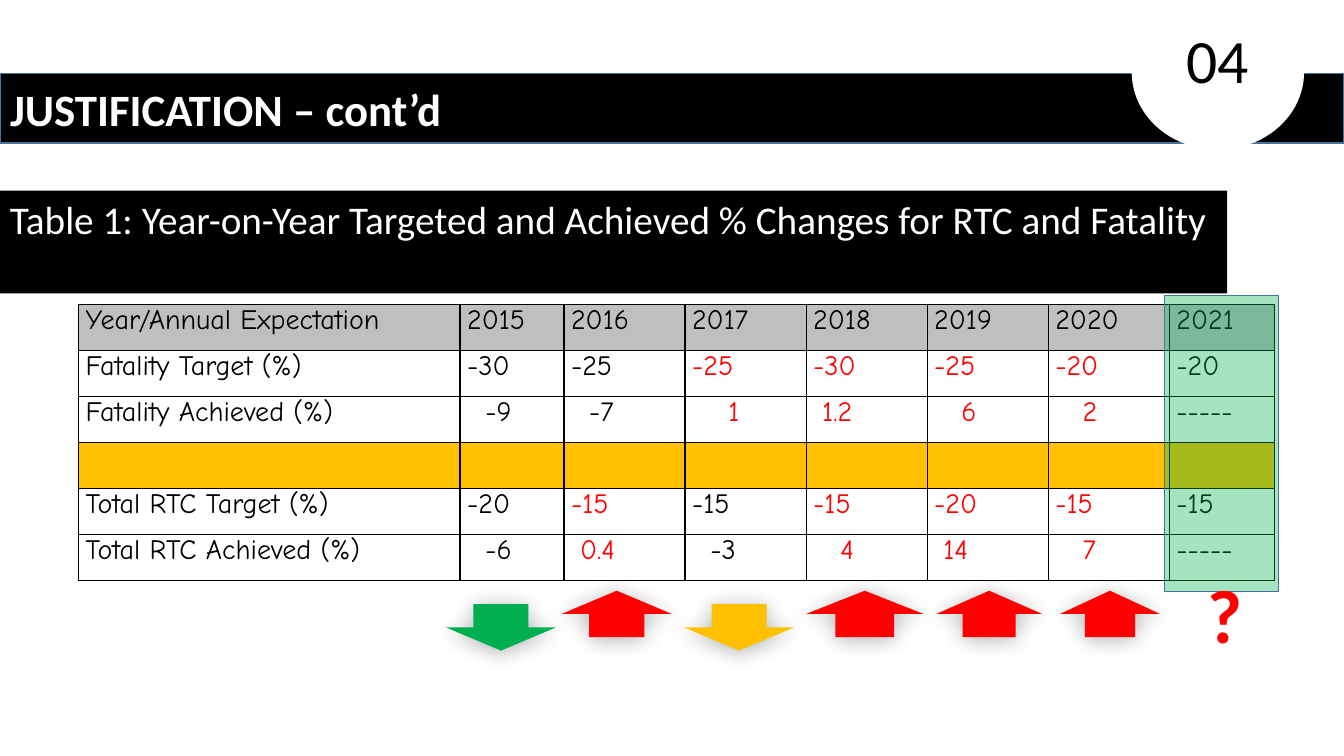
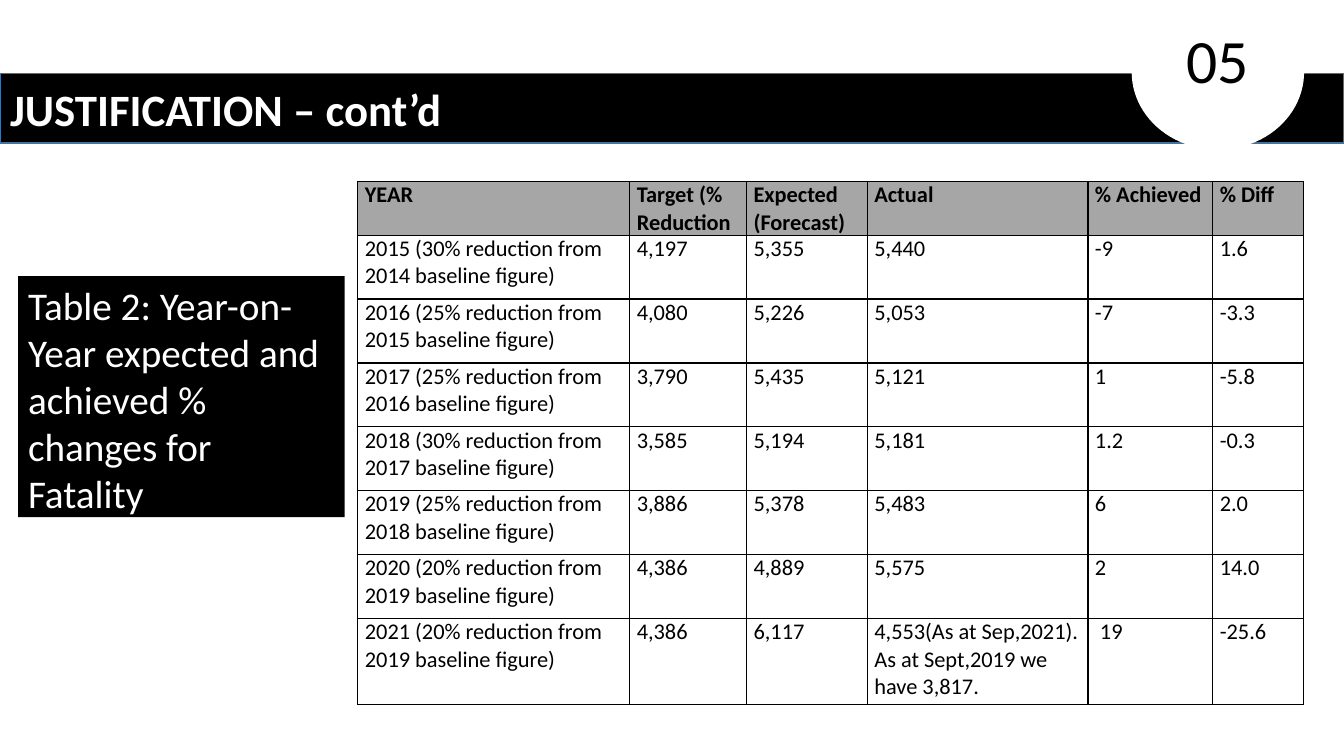
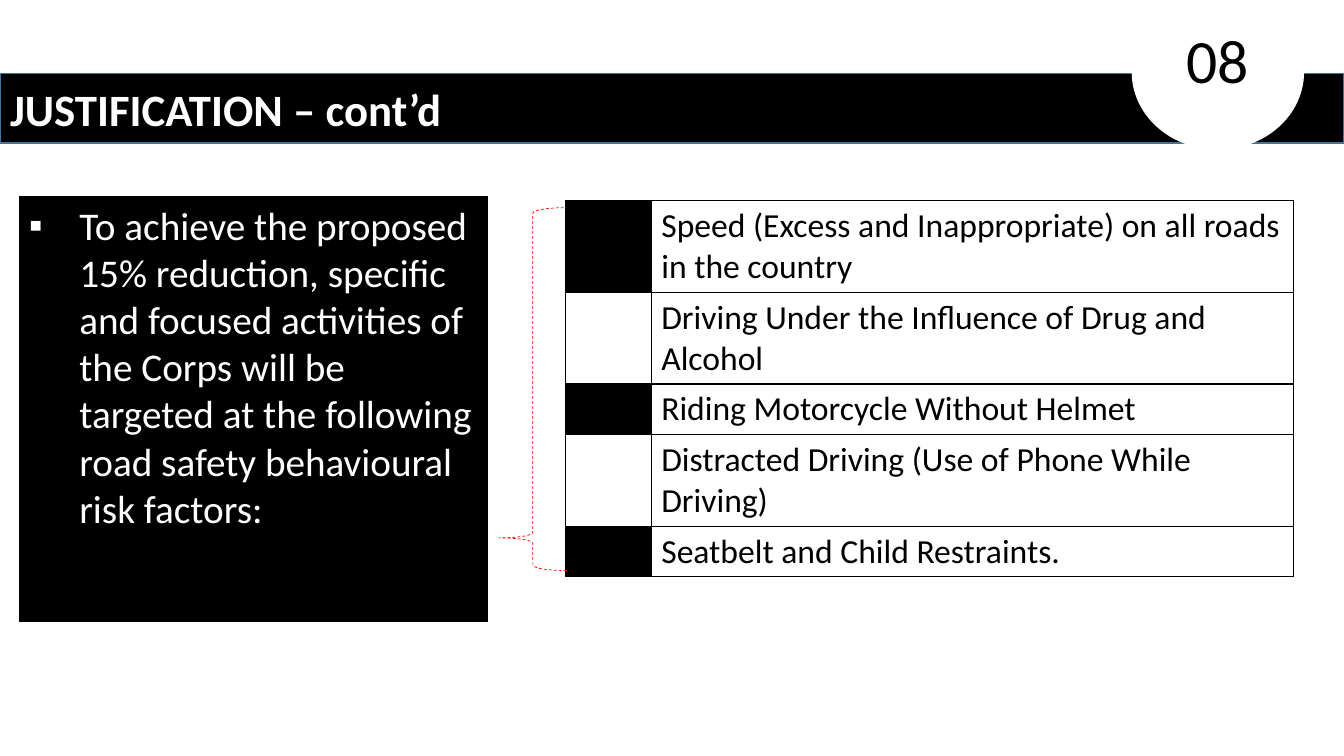
from dataclasses import dataclass

from pptx import Presentation
from pptx import util as u
from pptx.dml.color import RGBColor
from pptx.enum import dml, shapes, text
from pptx.oxml import parse_xml
from pptx.oxml.ns import nsdecls, qn

COLOURS = {"black": "000000", "white": "FFFFFF", "red": "FF0000",
           "green": "00B050", "amber": "FFC000", "edge": "43739E",
           "head1": "BFBFBF", "head2": "A6A6A6"}
SHAPE = shapes.MSO_SHAPE
WIDTH, HEIGHT = u.Inches(13.33), u.Inches(7.5)


@dataclass
class Box:
    """A region in slide units; inner boxes are given as percentages of it."""
    x: float
    y: float
    w: float
    h: float

    def inner(self, x, y, w, h):
        return Box(self.x + self.w * x / 100, self.y + self.h * y / 100,
                   self.w * w / 100, self.h * h / 100)

    def emu(self):
        return [u.Emu(int(v)) for v in (self.x, self.y, self.w, self.h)]


SLIDE = Box(0, 0, WIDTH, HEIGHT)


def rgb(name):
    return RGBColor.from_string(COLOURS[name])


def xml(tag, attrs="", inner=""):
    return parse_xml(f"<a:{tag} {nsdecls('a')} {attrs}>{inner}</a:{tag}>")


def paint(sp, fill=None, line=None, width=1):
    if fill:
        sp.fill.solid()
        sp.fill.fore_color.rgb = rgb(fill)
    else:
        sp.fill.background()
    if line:
        sp.line.color.rgb = rgb(line)
        sp.line.width = u.Pt(width)
    else:
        sp.line.fill.background()


def write(tf, words, size, colour="black", bold=False, face="Calibri",
          align=text.PP_ALIGN.LEFT):
    """Fill a text frame, one paragraph per line of words."""
    tf.word_wrap = True
    for i, line in enumerate(words.split("\n")):
        p = tf.paragraphs[0] if i == 0 else tf.add_paragraph()
        p.alignment = align
        r = p.add_run()
        r.text = line
        for key, value in {"size": u.Pt(size), "bold": bold, "name": face}.items():
            setattr(r.font, key, value)
        r.font.color.rgb = rgb(colour)


def add_shape(parent, kind, box, fill=None, line=None, width=1):
    sp = parent.add_shape(kind, *box.emu())
    sp.shadow.inherit = False
    paint(sp, fill, line, width)
    return sp


def add_turned(parent, kind, box, angle, fill):
    """Add a shape whose quarter-turned outline fills the box."""
    turned = Box(box.x + (box.w - box.h) / 2, box.y + (box.h - box.w) / 2, box.h, box.w)
    sp = add_shape(parent, kind, turned, fill)
    sp.rotation = angle
    return sp


def add_caption(s, box, words, line=None):
    sp = add_shape(s.shapes, SHAPE.RECTANGLE, box, "black", line, 0.75)
    sp.text_frame.vertical_anchor = text.MSO_ANCHOR.TOP
    write(sp.text_frame, words, 28, "white")
    return sp


def add_badge(s, box, number):
    group = s.shapes.add_group_shape().shapes
    add_turned(group, SHAPE.FLOWCHART_DELAY, box, 90, "white")
    label = group.add_textbox(*box.inner(26, 14.6, 48, 100).emu())
    write(label.text_frame, number, 44)


def add_page(prs, number):
    """Slide with the title band and the numbered badge."""
    s = prs.slides.add_slide(prs.slide_layouts[5])
    title = s.shapes.title
    box = SLIDE.inner(0, 9.73, 100, 9.2).emu()
    for key, value in zip(("left", "top", "width", "height"), box):
        setattr(title, key, value)
    paint(title, "black", "edge")
    tf = title.text_frame
    tf.auto_size = text.MSO_AUTO_SIZE.NONE
    tf.vertical_anchor = text.MSO_ANCHOR.MIDDLE
    write(tf, "JUSTIFICATION – cont’d", 32, "white", True)
    add_badge(s, SLIDE.inner(84.2, -0.73, 12.83, 20.53), number)
    return s


def add_grid(s, box, cols, rows):
    """Bordered table; cols and rows are relative widths and heights."""
    table = s.shapes.add_table(len(rows), len(cols), *box.emu()).table
    table.first_row = table.horz_banding = False
    for lines, key, sizes, total in ((table.columns, "width", cols, box.w),
                                     (table.rows, "height", rows, box.h)):
        for line, size in zip(lines, sizes):
            setattr(line, key, u.Emu(int(total * size / sum(sizes))))
    solid = f'<a:solidFill><a:srgbClr val="{COLOURS["black"]}"/></a:solidFill>'
    for cell in table.iter_cells():
        for side in "LRTB":
            cell._tc.get_or_add_tcPr().append(xml(f"ln{side}", 'w="12700"', solid))
        cell.fill.background()
    return table


def fill_cell(cell, colour):
    cell.fill.solid()
    cell.fill.fore_color.rgb = rgb(colour)


def tighten(cell, pad=0):
    """Small cell margins, with the text moved in by pad inches."""
    margins = {"left": 0.07 + pad, "right": 0.07, "top": 0, "bottom": 0}
    for side, size in margins.items():
        setattr(cell, f"margin_{side}", u.Inches(size))


# Slide 04: targets and achievements by year
# Each row: texts, indent steps, columns in red
CHANGES = [
    (["Year/Annual Expectation", *map(str, range(2015, 2022))], "00000000", ()),
    (["Fatality Target (%)", "-30", "-25", "-25", "-30", "-25", "-20", "-20"],
     "00000000", (3, 4, 5, 6)),
    (["Fatality Achieved (%)", "-9", "-7", "1", "1.2", "6", "2", "-----"],
     "02241330", (3, 4, 5, 6)),
    None,
    (["Total RTC Target (%)", "-20", "-15", "-15", "-15", "-20", "-15", "-15"],
     "00000000", (2, 4, 5, 6)),
    (["Total RTC Achieved (%)", "-6", "0.4", "-3", "4", "14", "7", "-----"],
     "02123130", (2, 4, 5, 6)),
]
# Each arrow: centre and spread in percent of the strip, turn, colour
ARROWS = [(7.6, 15.4, 90, "green"), (23.8, 15.4, 270, "red"),
          (40.9, 15.4, 90, "amber"), (58.5, 16.4, 270, "red"),
          (75.9, 14.8, 270, "red"), (92.8, 14, 270, "red")]


def add_changes_table(s, box):
    table = add_grid(s, box, [3.78, 1.03] + [1.2] * 5 + [1.04], [1] * len(CHANGES))
    for r, row in enumerate(CHANGES):
        for c, cell in enumerate(table.rows[r].cells):
            if row is None:
                fill_cell(cell, "amber")
                continue
            words, pads, reds = row
            if r == 0:
                fill_cell(cell, "head1")
            tighten(cell, int(pads[c]) * 0.09)
            write(cell.text_frame, words[c], 20, "red" if c in reds else "black",
                  face="Comic Neue", align=text.PP_ALIGN.JUSTIFY)


def add_trend_arrows(s, box):
    for centre, spread, angle, colour in ARROWS:
        top = 1.7 if angle == 270 else 24
        place = box.inner(centre - spread / 2, top, spread, 76.7)
        sp = add_turned(s.shapes, SHAPE.RIGHT_ARROW, place, angle, colour)
        effects = sp._element.spPr.find(qn("a:effectLst"))
        effects.append(xml("outerShdw", 'blurRad="190500" dist="25400" dir="5400000"',
                           '<a:srgbClr val="000000"><a:alpha val="30000"/></a:srgbClr>'))


def add_highlight(s, box):
    sp = add_shape(s.shapes, SHAPE.RECTANGLE, box, "green", "edge")
    clr = sp._element.spPr.find(qn("a:solidFill"))[0]
    clr.append(xml("alpha", 'val="35000"'))


def changes_slide(prs):
    s = add_page(prs, "04")
    add_caption(s, SLIDE.inner(0, 25.2, 91.3, 13.6),
                "Table 1: Year-on-Year Targeted and Achieved % Changes for RTC and Fatality")
    add_changes_table(s, SLIDE.inner(5.85, 40.27, 88.97, 36.53))
    add_trend_arrows(s, SLIDE.inner(33.23, 78, 53.19, 8))
    add_highlight(s, SLIDE.inner(86.65, 39.07, 8.48, 39.2))
    mark = s.shapes.add_textbox(*SLIDE.inner(89.12, 74.4, 3.6, 12.93).emu())
    write(mark.text_frame, "?", 54, "red", True)


# Slide 05: expected and actual fatalities
# Each row: year, reduction, baseline year, then the figures
FATALITY = [
    (2015, 30, 2014, "4,197", "5,355", "5,440", "-9", "1.6"),
    (2016, 25, 2015, "4,080", "5,226", "5,053", "-7", "-3.3"),
    (2017, 25, 2016, "3,790", "5,435", "5,121", "1", "-5.8"),
    (2018, 30, 2017, "3,585", "5,194", "5,181", "1.2", "-0.3"),
    (2019, 25, 2018, "3,886", "5,378", "5,483", "6", "2.0"),
    (2020, 20, 2019, "4,386", "4,889", "5,575", "2", "14.0"),
    (2021, 20, 2019, "4,386", "6,117",
     "4,553(As at Sep,2021).\nAs at Sept,2019 we have 3,817.", " 19", "-25.6"),
]


def add_fatality_table(s, box):
    rows = [["YEAR", "Target (% Reduction", "Expected (Forecast)", "Actual",
             "% Achieved", "% Diff"]]
    for year, cut, base, *figures in FATALITY:
        rows.append([f"{year} ({cut}% reduction from {base} baseline figure)", *figures])
    table = add_grid(s, box, [2.7, 1.16, 1.2, 2.19, 1.24, 0.9],
                     [0.53] + [0.63] * 6 + [0.85])
    for r, row in enumerate(rows):
        for cell, words in zip(table.rows[r].cells, row):
            if r == 0:
                fill_cell(cell, "head2")
            tighten(cell)
            write(cell.text_frame, words, 16, bold=r == 0)


def fatality_slide(prs):
    s = add_page(prs, "05")
    add_caption(s, SLIDE.inner(1.35, 36.53, 24.3, 31.87),
                "Table 2: Year-on-Year expected and achieved % changes for Fatality")
    add_fatality_table(s, SLIDE.inner(26.63, 24, 70.36, 69.2))


# Slide 08: risk factors
RISKS = ["Speed (Excess and Inappropriate) on all roads in the country",
         "Driving Under the Influence of Drug and Alcohol",
         "Riding Motorcycle Without Helmet",
         "Distracted Driving (Use of Phone While Driving)",
         "Seatbelt and Child Restraints."]


def add_risk_table(s, box):
    table = add_grid(s, box, [0.85, 6.37], [0.91, 0.91, 0.5, 0.91, 0.5])
    for r, risk in enumerate(RISKS):
        if r % 2 == 0:
            fill_cell(table.cell(r, 0), "black")
        write(table.cell(r, 1).text_frame, risk, 24)


def add_bullet(p):
    pPr = p._p.get_or_add_pPr()
    pPr.set("marL", str(u.Inches(0.5)))
    pPr.set("indent", str(-u.Inches(0.5)))
    pPr.append(xml("buFont", 'typeface="Arial"'))
    pPr.append(xml("buChar", 'char="▪"'))


def risks_slide(prs):
    s = add_page(prs, "08")
    panel = add_caption(s, SLIDE.inner(1.42, 26, 34.88, 56.27),
                        "To achieve the proposed 15% reduction, specific and focused "
                        "activities of the Corps will be targeted at the following road "
                        "safety behavioural risk factors:", "black")
    add_bullet(panel.text_frame.paragraphs[0])
    add_risk_table(s, SLIDE.inner(42.08, 26.53, 54.15, 49.73))
    brace = add_shape(s.shapes, SHAPE.LEFT_BRACE, SLIDE.inner(37.13, 27.47, 5.03, 48),
                      line="red", width=0.5)
    brace.line.dash_style = dml.MSO_LINE.DASH
    brace.adjustments[0], brace.adjustments[1] = 0.08, 0.91


def main():
    prs = Presentation()
    prs.slide_width, prs.slide_height = WIDTH, HEIGHT
    for build in (changes_slide, fatality_slide, risks_slide):
        build(prs)
    prs.save("out.pptx")


if __name__ == "__main__":
    main()
